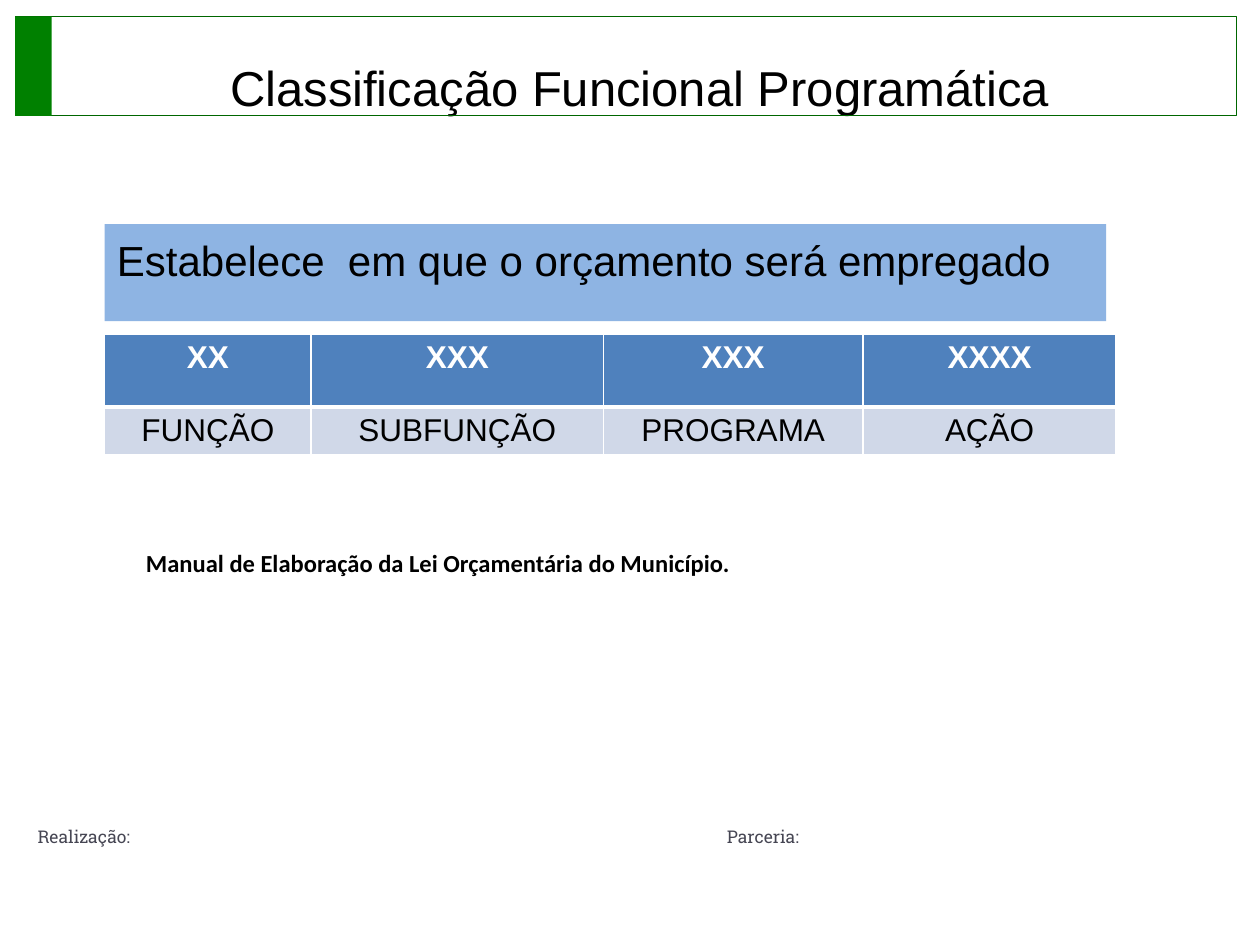
from lxml import etree
from pptx import Presentation
from pptx.dml.color import RGBColor
from pptx.enum.shapes import MSO_SHAPE
from pptx.enum.text import MSO_ANCHOR, MSO_AUTO_SIZE, PP_ALIGN
from pptx.oxml.ns import qn
from pptx.util import Inches, Pt

RECT = MSO_SHAPE.RECTANGLE
TOP = MSO_ANCHOR.TOP
FIXED = MSO_AUTO_SIZE.NONE
LEFT, CENTER, JUSTIFY = PP_ALIGN.LEFT, PP_ALIGN.CENTER, PP_ALIGN.JUSTIFY
COLORS = {
    "black": "000000", "white": "FFFFFF", "gray": "464653",
    "green": "008000", "frame": "006600", "band": "8EB4E3",
    "head": "4F81BD", "body": "D0D8E8",
}


def color(name):
    return RGBColor.from_string(COLORS[name])


class Deck:
    """Holds the text style and the current slide."""

    font = "Arial"

    def __init__(self):
        self.prs = Presentation()
        self.prs.slide_width, self.prs.slide_height = Inches(10), Inches(7.5)
        self.slide = self.prs.slides.add_slide(self.prs.slide_layouts[5])

    def label(self, frame, text, size, ink="black", font=None, bold=False,
              align=LEFT, top=0.05, tab=None):
        frame.word_wrap = True
        frame.auto_size = FIXED
        frame.vertical_anchor = TOP
        frame.margin_top = Inches(top)
        frame.text = text
        para = frame.paragraphs[0]
        if tab:
            tabs = etree.SubElement(para._p.get_or_add_pPr(), qn("a:tabLst"))
            etree.SubElement(tabs, qn("a:tab"), pos=str(Inches(tab)), algn="l")
        self.style(para, size, ink, font, bold, align)

    def style(self, para, size, ink, font=None, bold=False, align=LEFT):
        para.alignment = align
        para.font.name = font or self.font
        para.font.size = Pt(size)
        para.font.bold = bold
        para.font.color.rgb = color(ink)

    def title(self, box, text, size, **look):
        shape = self.slide.shapes.title
        shape.left, shape.top, shape.width, shape.height = map(Inches, box)
        self.label(shape.text_frame, text, size, **look)

    def text(self, box, text, size, **look):
        shape = self.slide.shapes.add_textbox(*map(Inches, box))
        self.label(shape.text_frame, text, size, **look)

    def rect(self, box, fill=None, line=None):
        shape = self.slide.shapes.add_shape(RECT, *map(Inches, box))
        shape.shadow.inherit = False
        if fill:
            shape.fill.solid()
            shape.fill.fore_color.rgb = color(fill)
        else:
            shape.fill.background()
        if line:
            shape.line.color.rgb = color(line)
            shape.line.width = Pt(0.5)
        else:
            shape.line.fill.background()
        return shape

    def table(self, left, top, cols, heights, rows, size):
        """Draw a table whose first row is the header."""
        box = (left, top, sum(cols), sum(heights))
        grid = self.slide.shapes.add_table(
            len(rows), len(cols), *map(Inches, box)).table
        for col, width in zip(grid.columns, cols):
            col.width = Inches(width)
        for r, (row, height) in enumerate(zip(rows, heights)):
            grid.rows[r].height = Inches(height)
            head = r == 0
            for c, label in enumerate(row):
                cell = grid.cell(r, c)
                cell.text = label
                self.style(cell.text_frame.paragraphs[0], size,
                           "white" if head else "black",
                           bold=head, align=CENTER)
                cell.fill.solid()
                cell.fill.fore_color.rgb = color("head" if head else "body")
                self.edge(cell, {"L": 1, "R": 1, "T": 1 if head else 3,
                                 "B": 3 if head else 1})

    def edge(self, cell, widths):
        """Give a cell white borders, which must come before its fill."""
        props = cell._tc.get_or_add_tcPr()
        for i, (side, width) in enumerate(widths.items()):
            line = etree.Element(qn("a:ln" + side), w=str(Pt(width)))
            fill = etree.SubElement(line, qn("a:solidFill"))
            etree.SubElement(fill, qn("a:srgbClr"), val=COLORS["white"])
            props.insert(i, line)


def main():
    deck = Deck()
    deck.text((0.2, 6.51, 9.55, 0.31), "Realização:\tParceria:", 10,
              ink="gray", font="Roboto Slab", tab=5.47)
    deck.rect((0.12, 0.13, 9.69, 0.79), line="frame")
    deck.rect((0.12, 0.13, 0.29, 0.79), fill="green")
    deck.title((0.51, 0.36, 9.13, 0.5), "Classificação Funcional Programática",
               28, align=CENTER, top=0.1)
    deck.text((1.06, 4.3, 8.82, 0.56),
              "Manual de Elaboração da Lei Orçamentária do Município.", 14,
              font="Calibri", bold=True)
    band = deck.rect((0.83, 1.78, 7.95, 0.77), fill="band")
    deck.label(band.text_frame, "Estabelece  em que o orçamento será empregado",
               24, align=JUSTIFY, top=0.08)
    deck.table(0.83, 2.65, (1.64, 2.32, 2.06, 2.01), (0.58, 0.38),
               (("XX", "XXX", "XXX", "XXXX"),
                ("FUNÇÃO", "SUBFUNÇÃO", "PROGRAMA", "AÇÃO")), 18)
    deck.prs.save("out.pptx")


if __name__ == "__main__":
    main()
